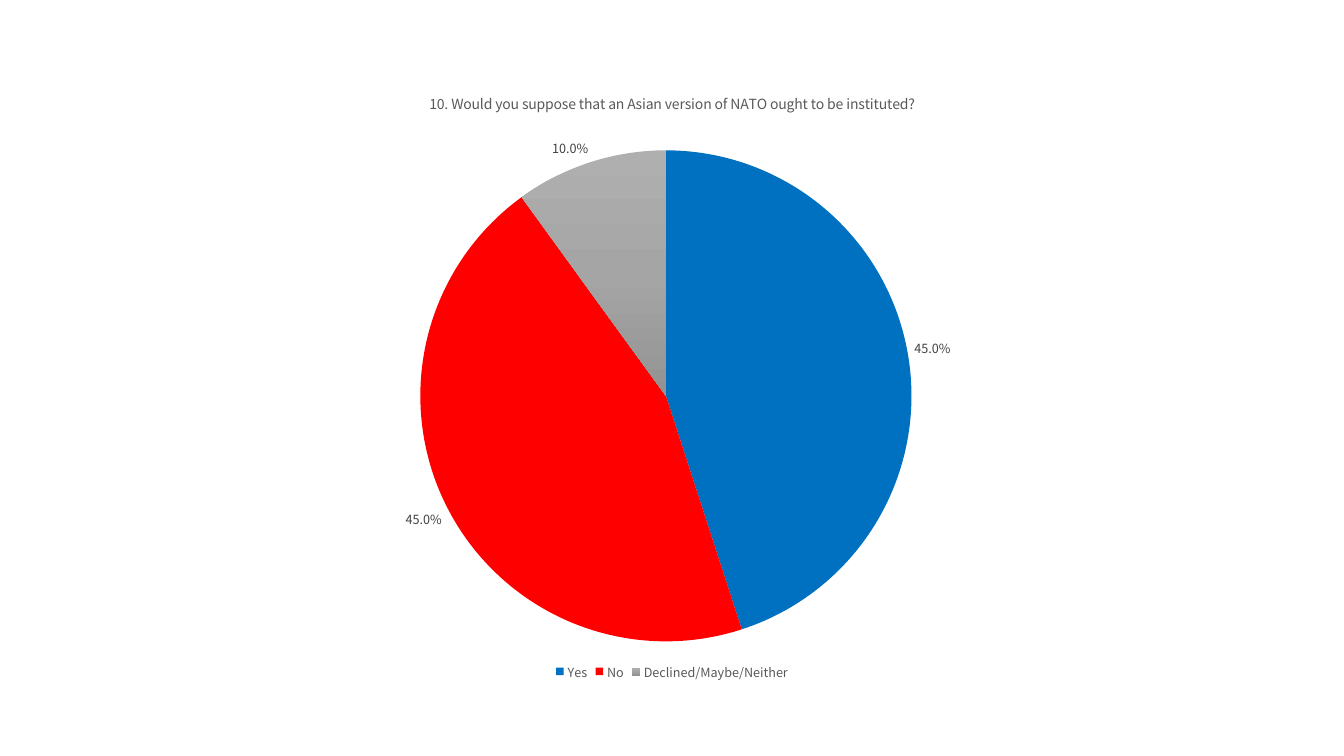
from copy import deepcopy

from pptx import Presentation
from pptx.chart.data import CategoryChartData
from pptx.dml.color import RGBColor
from pptx.enum.chart import XL_CHART_TYPE, XL_LABEL_POSITION, XL_LEGEND_POSITION
from pptx.oxml import parse_xml
from pptx.oxml.ns import nsdecls, qn
from pptx.util import Inches, Pt

PIE = XL_CHART_TYPE.PIE
OUTSIDE_END = XL_LABEL_POSITION.OUTSIDE_END
BOTTOM = XL_LEGEND_POSITION.BOTTOM

BLACK = RGBColor(0x00, 0x00, 0x00)
TEXT_GREY = RGBColor(0x59, 0x59, 0x59)
LABEL_GREY = RGBColor(0x40, 0x40, 0x40)
YES_BLUE = RGBColor(0x00, 0x70, 0xC0)
NO_RED = RGBColor(0xFF, 0x00, 0x00)
OTHER_GREYS = (
    RGBColor(0xAF, 0xAF, 0xAF),
    RGBColor(0xA5, 0xA5, 0xA5),
    RGBColor(0x93, 0x93, 0x93),
)

FONT = "Noto Sans CJK KR"
QUESTION_NUMBER = "10."
QUESTION = "Would you suppose that an Asian version of NATO ought to be instituted?"
ANSWERS = {"Yes": 0.45, "No": 0.45, "Declined/Maybe/Neither": 0.1}
PERCENT = "0.0%"

# Shares of the chart frame: left, top, width, height
PIE_AREA = {"x": 0.29, "y": 0.13, "w": 0.41, "h": 0.8}


def style_font(font, size, color):
    font.name = FONT
    font.size = Pt(size)
    font.bold = False
    font.color.rgb = color


def add_pie(slide, width, height):
    data = CategoryChartData(number_format=PERCENT)
    data.categories = list(ANSWERS)
    data.add_series(f"{QUESTION_NUMBER} {QUESTION}", list(ANSWERS.values()))
    left, top = Inches(0.7), Inches(0.7)
    frame = slide.shapes.add_chart(
        PIE, left, top, width - 2 * left, Inches(6.09), data
    )
    chart = frame.chart
    style_font(chart.font, 10, BLACK)
    return chart


def place_pie(chart):
    """Fix the plot area inside the chart frame."""
    plot_area = chart.plots[0]._element.getparent()
    for layout in plot_area.findall(qn("c:layout")):
        plot_area.remove(layout)
    sizes = "".join(f'<c:{side} val="{share}"/>' for side, share in PIE_AREA.items())
    plot_area.insert(0, parse_xml(
        f'<c:layout {nsdecls("c")}><c:manualLayout><c:layoutTarget val="inner"/>'
        f'<c:xMode val="edge"/><c:yMode val="edge"/>{sizes}'
        "</c:manualLayout></c:layout>"
    ))


def add_question(chart):
    chart.has_title = True
    title = chart.chart_title
    title.include_in_layout = False
    paragraph = title.text_frame.paragraphs[0]
    for text in (QUESTION_NUMBER, " ", QUESTION):
        run = paragraph.add_run()
        run.text = text
        style_font(run.font, 10, TEXT_GREY)


def fill_gradient(fill, colors):
    """Shade from top to bottom through evenly spaced colours."""
    fill.gradient()
    fill.gradient_angle = 270
    stop_list = fill.gradient_stops[0]._gs.getparent()
    while len(stop_list) < len(colors):
        stop_list.append(deepcopy(stop_list[0]))
    for index, (stop, color) in enumerate(zip(fill.gradient_stops, colors)):
        stop.position = index / (len(colors) - 1)
        stop.color.rgb = color


def color_slices(series):
    for index, color in enumerate((YES_BLUE, NO_RED)):
        fill = series.points[index].format.fill
        fill.solid()
        fill.fore_color.rgb = color
    fill_gradient(series.points[2].format.fill, OTHER_GREYS)


def add_labels(plot):
    plot.vary_by_categories = True
    plot.has_data_labels = True
    labels = plot.data_labels
    labels.show_value = True
    labels.show_percentage = False
    labels.number_format = PERCENT
    labels.number_format_is_linked = False
    labels.position = OUTSIDE_END
    style_font(labels.font, 9, LABEL_GREY)


def add_legend(chart):
    chart.has_legend = True
    chart.legend.position = BOTTOM
    chart.legend.include_in_layout = False
    style_font(chart.legend.font, 9, TEXT_GREY)


def main():
    presentation = Presentation()
    presentation.slide_width = Inches(13.33)
    presentation.slide_height = Inches(7.5)
    slide = presentation.slides.add_slide(presentation.slide_layouts[6])
    chart = add_pie(slide, presentation.slide_width, presentation.slide_height)
    place_pie(chart)
    add_question(chart)
    color_slices(chart.plots[0].series[0])
    add_labels(chart.plots[0])
    add_legend(chart)
    presentation.save("out.pptx")


if __name__ == "__main__":
    main()
